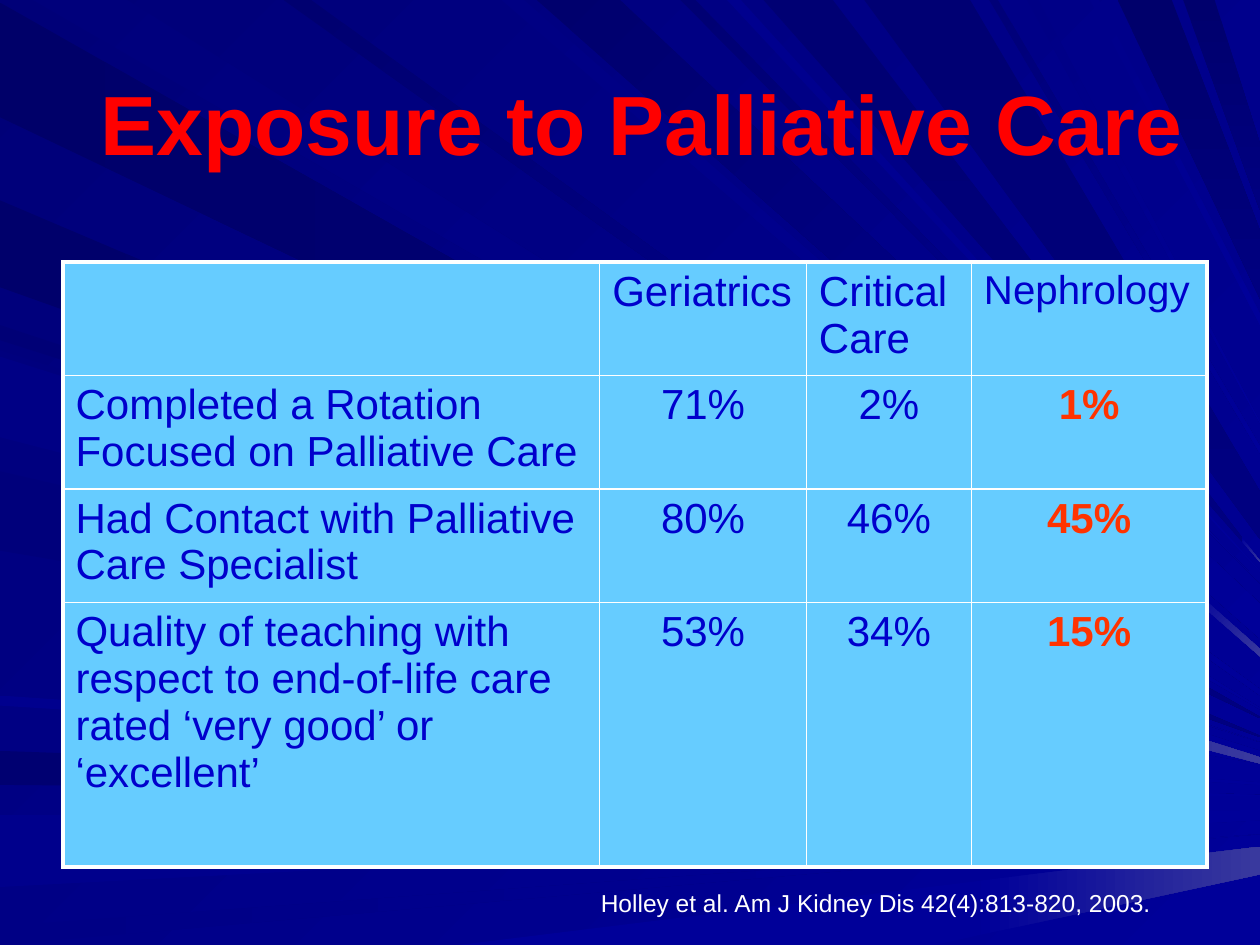
import collections

import pptx
import pptx.dml.color
import pptx.enum.text
import pptx.oxml
import pptx.oxml.ns
import pptx.util

PX = 9144
WIDTH, HEIGHT = 1000, 750
ALIGN = pptx.enum.text.PP_ALIGN
ANCHOR = pptx.enum.text.MSO_ANCHOR
FIT = pptx.enum.text.MSO_AUTO_SIZE

DULL, BRIGHT, GLINT = "000080", "000099", "39399E"
RED, ORANGE, BLUE, SKY, WHITE = "FF0000", "FF3300", "0000CC", "66CCFF", "FFFFFF"

Ray = collections.namedtuple(
    "Ray", "edge start end tip_start tip_end dark light glint_from", defaults=(BRIGHT, None))
RAYS = [
    Ray("left", 2, 93, 569, 570, "000069", DULL),
    Ray("top", 26, 101, 563, 562, "00007B"),
    Ray("left", 596, 623, 631, 632, "000071"),
    Ray("left", 647, 704, 643, 651, "00008C"),
    Ray("left", 735, 750, 662, 662, "000085"),
    Ray("bottom", 364, 742, 672, 694, BRIGHT, glint_from=778),
    Ray("left", 258, 270, 589, 589, "000076"),
    Ray("left", 159, 228, 584, 585, "00006B", DULL),
    Ray("top", 398, 416, 521, 515, "000083", glint_from=945),
    Ray("top", 426, 492, 507, 479, "00006D"),
    Ray("top", 540, 552, 463, 463, "000073"),
    Ray("top", 606, 661, 446, 445, "000073", DULL, 986),
    Ray("top", 887, 930, 237, 183, "00006B", DULL),
    Ray("top", 939, 964, 167, 114, "00006D", DULL),
    Ray("left", 278, 342, 596, 602, "00007E"),
    Ray("left", 374, 437, 605, 606, "00007B"),
    Ray("left", 552, 560, 621, 623, "00008E"),
    Ray("top", 225, 247, 552, 547, "000070"),
    Ray("top", 577, 588, 454, 453, "00008E"),
    Ray("top", 686, 770, 428, 390, "000073", DULL),
    Ray("top", 785, 792, 360, 354, "000078"),
    Ray("top", 815, 824, 336, 335, "000085"),
    Ray("top", 865, 872, 258, 249, "00008A"),
    Ray("left", 283, 347, 601, 606, "000085", glint_from=635),
]

ROWS = [
    ("", "Geriatrics", "Critical Care", "Nephrology"),
    ("Completed a Rotation Focused on Palliative Care", "71%", "2%", "1%"),
    ("Had Contact with Palliative Care Specialist", "80%", "46%", "45%"),
    ("Quality of teaching with respect to end-of-life care rated ‘very good’ or ‘excellent’",
     "53%", "34%", "15%"),
]
COLUMN_WIDTHS = (426, 164, 131, 187)
ROW_HEIGHTS = (90, 90, 90, 210)


def color(value):
    return pptx.dml.color.RGBColor.from_string(value)


def px(value):
    return pptx.util.Emu(value * PX)


def apply_format(target, values):
    for name, value in values.items():
        setattr(target, name, value)


def place(shape, box):
    apply_format(shape, dict(zip(("left", "top", "width", "height"), map(px, box))))


def write(para, text, size, ink, bold=False, align=ALIGN.LEFT):
    para.alignment = align
    span = para.add_run()
    span.text = text
    apply_format(span.font, {"name": "Arial", "size": pptx.util.Pt(size), "bold": bold})
    span.font.color.rgb = color(ink)


def paint_solid(fill, value):
    fill.solid()
    fill.fore_color.rgb = color(value)


def paint_gradient(fill, dark, light, angle):
    fill.gradient()
    fill.gradient_angle = (360 - angle) % 360
    for stop, value in zip(fill.gradient_stops, (dark, light)):
        stop.color.rgb = color(value)


def edge_point(edge, distance, width, height):
    return {"left": (0, distance), "top": (distance, 0), "bottom": (distance, height)}[edge]


def point_between(near, far, x):
    share = (x - near[0]) / (far[0] - near[0])
    return x, round(near[1] + share * (far[1] - near[1]))


def ray_angle(ray):
    if ray.edge != "top":
        return 0
    return 90 if ray.light == DULL else 45


def add_beam(page, origin, near_side, far_side, dark, light, angle):
    outline = [*near_side, *reversed(far_side)]
    builder = page.shapes.build_freeform(*outline[0], scale=PX)
    builder.add_line_segments(outline[1:], close=True)
    beam = builder.convert_to_shape(*map(px, origin))
    beam.shadow.inherit = False
    beam.line.fill.background()
    paint_gradient(beam.fill, dark, light, angle)


def add_backdrop(page, box):
    left, top, width, height = box
    paint_gradient(page.background.fill, "000078", BRIGHT, 45)
    for ray in RAYS:
        base = [edge_point(ray.edge, at, width, height) for at in (ray.start, ray.end)]
        tip = [(width, ray.tip_start), (width, ray.tip_end)]
        angle = ray_angle(ray)
        body_end = tip
        if ray.glint_from:
            body_end = [point_between(near, far, ray.glint_from)
                        for near, far in zip(base, tip)]
            add_beam(page, (left, top), body_end, tip, BRIGHT, GLINT, angle)
        add_beam(page, (left, top), base, body_end, ray.dark, ray.light, angle)


def add_title(page, box):
    title = page.shapes.title
    title.element.getparent().append(title.element)
    place(title, box)
    apply_format(title.text_frame, {
        "word_wrap": True, "auto_size": FIT.NONE, "vertical_anchor": ANCHOR.MIDDLE})
    write(title.text_frame.paragraphs[0], "Exposure to Palliative Care",
          48, RED, True, ALIGN.CENTER)


def set_borders(cell, widths):
    properties = cell._tc.get_or_add_tcPr()
    for index, (side, width) in enumerate(zip("LRTB", widths)):
        properties.insert(index, pptx.oxml.parse_xml(
            f'<a:ln{side} {pptx.oxml.ns.nsdecls("a")} w="{pptx.util.Pt(width)}">'
            f'<a:solidFill><a:srgbClr val="{WHITE}"/></a:solidFill></a:ln{side}>'))


def add_exposure_table(page, box):
    frame = page.shapes.add_table(len(ROWS), len(COLUMN_WIDTHS), *map(px, box))
    table = frame.table
    apply_format(table, {"first_row": False, "horz_banding": False})
    for column, width in zip(table.columns, COLUMN_WIDTHS):
        column.width = px(width)
    last_row, last_column = len(ROWS) - 1, len(COLUMN_WIDTHS) - 1
    for r, texts in enumerate(ROWS):
        table.rows[r].height = px(ROW_HEIGHTS[r])
        for c, text in enumerate(texts):
            cell = table.cell(r, c)
            paint_solid(cell.fill, SKY)
            outer = (c == 0, c == last_column, r == 0, r == last_row)
            set_borders(cell, [2.25 if on_rim else 1 for on_rim in outer])
            if text:
                is_nephrology = c == last_column
                strong = is_nephrology and r > 0
                size = 23 if is_nephrology and r == 0 else 24
                align = ALIGN.CENTER if r and c else ALIGN.LEFT
                write(cell.text_frame.paragraphs[0], text, size,
                      ORANGE if strong else BLUE, strong, align)


def add_citation(page, box):
    citation = page.shapes.add_textbox(*map(px, box))
    apply_format(citation.text_frame, {
        "word_wrap": True, "auto_size": FIT.SHAPE_TO_FIT_TEXT})
    write(citation.text_frame.paragraphs[0],
          "Holley et al. Am J Kidney Dis 42(4):813-820, 2003.", 14, WHITE)


def main():
    deck = pptx.Presentation()
    apply_format(deck, {"slide_width": px(WIDTH), "slide_height": px(HEIGHT)})
    page = deck.slides.add_slide(deck.slide_layouts[5])
    add_backdrop(page, (0, 0, WIDTH, HEIGHT))
    add_title(page, (42, 75, 935, 44))
    add_exposure_table(page, (50, 208, sum(COLUMN_WIDTHS), sum(ROW_HEIGHTS)))
    add_citation(page, (467, 700, 500, 34))
    deck.save("out.pptx")


if __name__ == "__main__":
    main()
